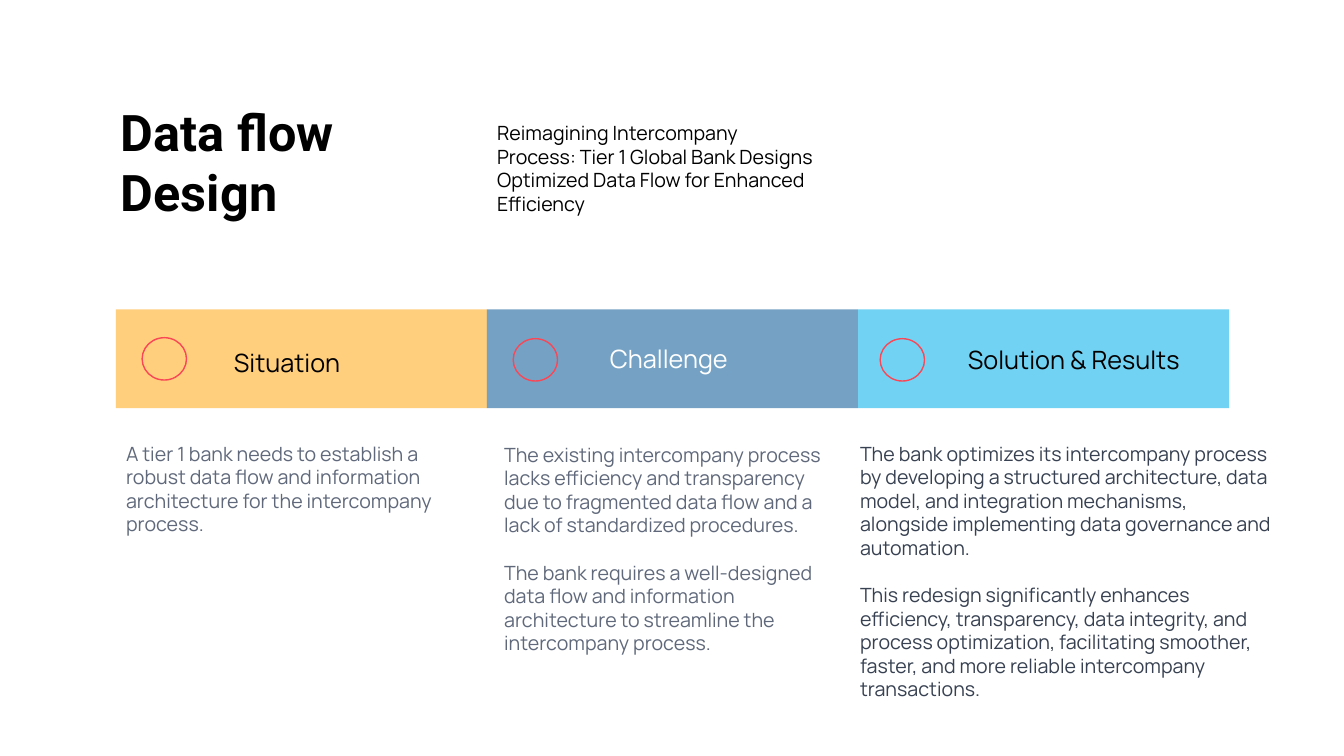
from lxml import etree
from pptx import Presentation
from pptx.dml.color import RGBColor
from pptx.enum.shapes import MSO_SHAPE as Shape
from pptx.enum.text import MSO_ANCHOR as Anchor, MSO_AUTO_SIZE as AutoSize, PP_ALIGN as Align
from pptx.oxml.ns import qn
from pptx.util import Inches, Pt

COLORS = {
    "black": "000000", "white": "FFFFFF", "grey": "60697B", "slate": "374151",
    "amber": "FFCF7E", "navy": "005493", "sky": "72D2F3", "red": "FA4655",
}
BAND_LEFT, BAND_TOP, BAND_WIDTH, BAND_HEIGHT = 1.15, 3.07, 3.68, 0.98
COMPARISON_LAYOUT = 4


class FlowPage:
    title_font = "Roboto"
    body_font = "Manrope"
    paragraph_gap = Pt(17)

    def __init__(self, deck):
        self.page = deck.slides.add_slide(deck.slide_layouts[COMPARISON_LAYOUT])

    def color(self, name):
        return RGBColor.from_string(COLORS[name])

    def place(self, item, left, top, width, height):
        item.left, item.top = Inches(left), Inches(top)
        item.width, item.height = Inches(width), Inches(height)

    def set_text(self, box, texts, size, color, font, bold=False, inset=0.1, wrap=True):
        frame = box.text_frame
        frame.word_wrap = wrap
        frame.auto_size = AutoSize.SHAPE_TO_FIT_TEXT
        frame.vertical_anchor = Anchor.TOP
        frame.margin_left = frame.margin_right = Inches(inset)
        frame.margin_top = frame.margin_bottom = Inches(0.05)
        for number, text in enumerate(texts):
            para = frame.add_paragraph() if number else frame.paragraphs[0]
            para.alignment = Align.LEFT
            para.space_before = self.paragraph_gap if number else Pt(0)
            span = para.add_run()
            span.text = text
            span.font.name, span.font.size, span.font.bold = font, Pt(size), bold
            span.font.color.rgb = self.color(color)

    def title(self, text, *area):
        box = self.page.shapes.title
        self.place(box, *area)
        self.set_text(box, [text], 36, "black", self.title_font, bold=True, inset=0.05)

    def body(self, index, texts, color, *area):
        box = self.page.placeholders[index]
        self.place(box, *area)
        self.set_text(box, texts, 14, color, self.body_font)
        for para in box.text_frame.paragraphs:
            properties = para._p.get_or_add_pPr()
            properties.set("marL", "0")
            properties.set("indent", "0")
            etree.SubElement(properties, qn("a:buNone"))

    def heading(self, text, color, *area):
        box = self.page.shapes.add_textbox(*map(Inches, area))
        self.set_text(box, [text], 18, color, self.body_font, inset=0.05, wrap=False)

    def band(self, column, color, opacity):
        left = BAND_LEFT + column * BAND_WIDTH
        area = (left, BAND_TOP, BAND_WIDTH, BAND_HEIGHT)
        band = self.page.shapes.add_shape(Shape.RECTANGLE, *map(Inches, area))
        band.shadow.inherit = False
        band.fill.solid()
        band.fill.fore_color.rgb = self.color(color)
        band.line.fill.background()
        if opacity < 100:
            tint = band._element.spPr.find(qn("a:solidFill"))[0]
            etree.SubElement(tint, qn("a:alpha")).set("val", str(opacity * 1000))

    def ring(self, left, top):
        ring = self.page.shapes.add_shape(Shape.OVAL, *map(Inches, (left, top, 0.44, 0.42)))
        ring.shadow.inherit = False
        ring.fill.background()
        ring.line.color.rgb = self.color("red")
        ring.line.width = Pt(1)


def main():
    deck = Presentation()
    deck.slide_width, deck.slide_height = Inches(13.33), Inches(7.5)
    flow = FlowPage(deck)
    flow.title("Data flow Design", 1.15, 0.95, 3.39, 1.31)
    flow.body(1, ["Reimagining Intercompany Process: Tier 1 Global Bank Designs "
                  "Optimized Data Flow for Enhanced Efficiency"],
              "black", 4.83, 1.15, 3.39, 1.04)

    columns = [
        (("amber", 100), (1.41, 3.35), ("Situation", "black", 2.27, 3.4, 1.28, 0.4),
         (["A tier 1 bank needs to establish a robust data flow and information "
           "architecture for the intercompany process."],
          "grey", 1.15, 4.33, 3.68, 1.04)),
        (("navy", 54), (5.09, 3.36), ("Challenge", "white", 6, 3.36, 1.46, 0.4),
         (["The existing intercompany process lacks efficiency and transparency due to "
           "fragmented data flow and a lack of standardized procedures.",
           "The bank requires a well-designed data flow and information architecture to "
           "streamline the intercompany process."],
          "grey", 4.9, 4.34, 3.53, 2.69)),
        (("sky", 100), (8.73, 3.36), ("Solution & Results", "black", 9.55, 3.37, 2.38, 0.4),
         (["The bank optimizes its intercompany process by developing a structured "
           "architecture, data model, and integration mechanisms, alongside implementing "
           "data governance and automation.",
           "This redesign significantly enhances efficiency, transparency, data integrity, "
           "and process optimization, facilitating smoother, faster, and more reliable "
           "intercompany transactions."],
          "slate", 8.43, 4.33, 4.29, 2.69)),
    ]
    for number, (band, ring, heading, body) in enumerate(columns):
        flow.band(number, *band)
        flow.ring(*ring)
        flow.heading(*heading)
        flow.body(number + 2, *body)
    deck.save("out.pptx")


if __name__ == "__main__":
    main()
